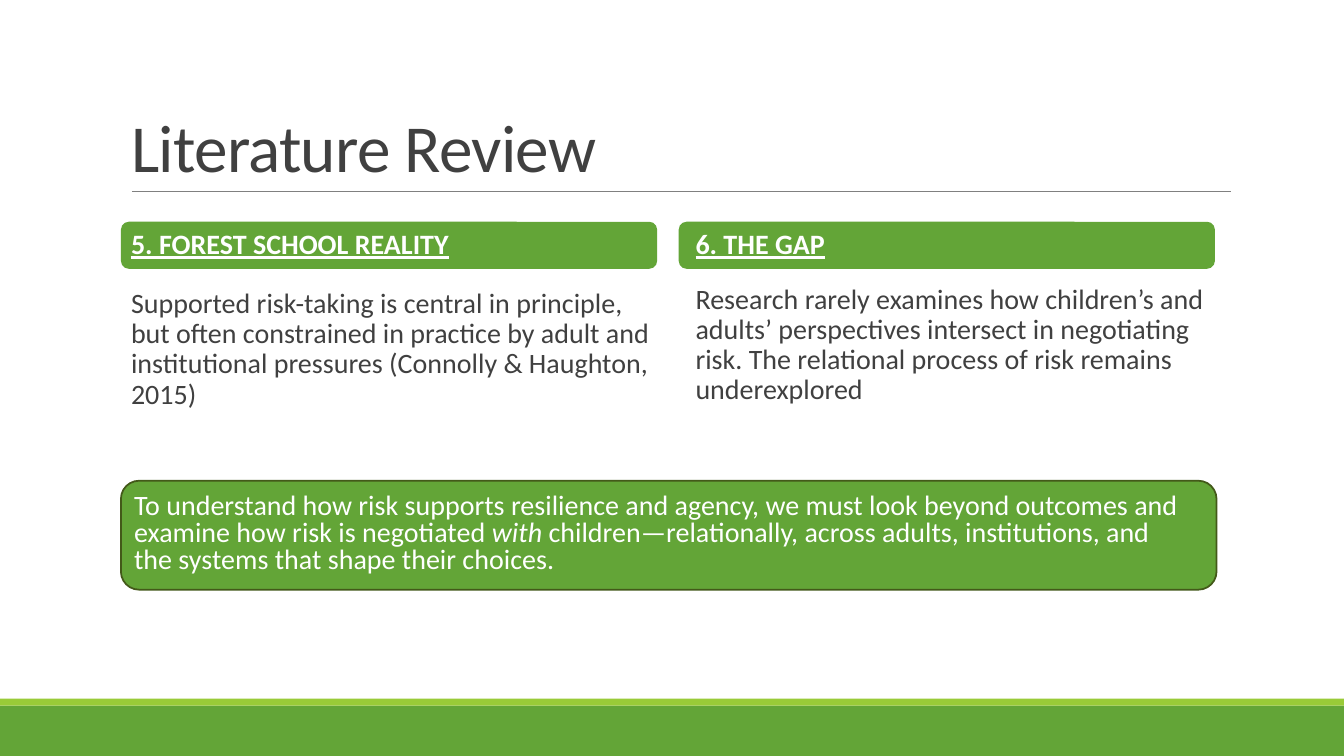
import lxml.etree
import pptx
import pptx.dml.color
import pptx.enum.shapes
import pptx.enum.text
import pptx.oxml.ns
import pptx.util
from dataclasses import dataclass

Pt = pptx.util.Pt
ANCHOR = pptx.enum.text.MSO_ANCHOR
SHAPE = pptx.enum.shapes.MSO_SHAPE

# Content
TITLE = "Literature Review"
COLUMNS = [
    {
        "heading": "5. FOREST SCHOOL REALITY",
        "body": "Supported risk-taking is central in principle, but often constrained "
                "in practice by adult and institutional pressures (Connolly & Haughton, 2015)",
        "body_top": 203,
    },
    {
        "heading": "6. THE GAP",
        "body": "Research rarely examines how children’s and adults’ perspectives intersect "
                "in negotiating risk. The relational process of risk remains underexplored",
        "body_top": 200,
    },
]
# Each conclusion line is a list of (text, italic) runs
CONCLUSION = [
    [
        ("To understand how risk supports resilience and agency, we must look beyond "
         "outcomes and examine how risk is negotiated ", False),
        ("with", True),
        (" children—relationally, across adults, institutions, and ", False),
    ],
    [("the systems that shape their choices.", False)],
]


@dataclass(frozen=True)
class Theme:
    font: str = "Calibri"
    green: str = "63A537"
    lime: str = "99CB38"
    dark_green: str = "435919"
    gray: str = "808080"
    ink: str = "404040"
    white: str = "FFFFFF"
    title_size: int = 48
    text_size: int = 20


THEME = Theme()

# Layout in points
WIDTH, HEIGHT = 960, 540
LEFT = 86.4
FOOTER_TOP, STRIPE_HEIGHT = 504, 5
BAR_TOP, BAR_WIDTH, BAR_HEIGHT, BAR_PITCH = 158.4, 383, 33.6, 398.4
TEXT_WIDTH, TEXT_PITCH = 388.8, 403.2
HEADING_TOP, HEADING_HEIGHT, BODY_HEIGHT = 146.2, 58.3, 111.6
CALLOUT_TOP, CALLOUT_WIDTH, CALLOUT_HEIGHT = 343.4, 782.6, 77.8


def color(value):
    return pptx.dml.color.RGBColor.from_string(value)


def add_block(slide, kind, left, top, width, height, fill, line=None):
    shape = slide.shapes.add_shape(kind, Pt(left), Pt(top), Pt(width), Pt(height))
    shape.shadow.inherit = False
    shape.fill.solid()
    shape.fill.fore_color.rgb = color(fill)
    if line:
        shape.line.color.rgb = color(line)
        shape.line.width = Pt(1.25)
    else:
        shape.line.fill.background()


def add_rule(slide, left, right, top):
    rule = slide.shapes.add_connector(
        pptx.enum.shapes.MSO_CONNECTOR.STRAIGHT, Pt(left), Pt(top), Pt(right), Pt(top))
    rule.line.color.rgb = color(THEME.gray)
    rule.line.width = Pt(0.5)
    lxml.etree.SubElement(rule.element.spPr, pptx.oxml.ns.qn("a:effectLst"))


def place(shape, left, top, width, height, anchor, side_margin=7.2):
    shape.left, shape.top, shape.width, shape.height = map(Pt, (left, top, width, height))
    frame = shape.text_frame
    frame.word_wrap = True
    frame.auto_size = pptx.enum.text.MSO_AUTO_SIZE.NONE
    frame.vertical_anchor = anchor
    frame.margin_left = frame.margin_right = Pt(side_margin)
    frame.margin_top = frame.margin_bottom = Pt(3.6)
    return frame.paragraphs[0]


def space(paragraph, line_spacing, after=2):
    paragraph.alignment = pptx.enum.text.PP_ALIGN.LEFT
    paragraph.line_spacing = line_spacing
    paragraph.space_before = Pt(0)
    paragraph.space_after = Pt(after)


def add_run(paragraph, text, ink, size=THEME.text_size, bold=False, italic=False,
            underline=False):
    run = paragraph.add_run()
    run.text = text
    font = run.font
    font.name, font.size = THEME.font, Pt(size)
    font.bold, font.italic, font.underline = bold, italic, underline
    font.color.rgb = color(ink)
    return run


def add_blank_bullet(paragraph):
    properties = paragraph._p.get_or_add_pPr()
    properties.set("marL", str(Pt(7.2)))
    properties.set("indent", str(Pt(-7.2)))
    bullet_color = lxml.etree.SubElement(properties, pptx.oxml.ns.qn("a:buClr"))
    lxml.etree.SubElement(bullet_color, pptx.oxml.ns.qn("a:srgbClr"), val=THEME.lime)
    lxml.etree.SubElement(properties, pptx.oxml.ns.qn("a:buChar"), char=" ")


def main():
    presentation = pptx.Presentation()
    presentation.slide_width, presentation.slide_height = Pt(WIDTH), Pt(HEIGHT)
    slide = presentation.slides.add_slide(presentation.slide_layouts.get_by_name("Comparison"))
    placeholders = list(slide.placeholders)

    # Footer bands and title rule
    add_block(slide, SHAPE.RECTANGLE, 0, FOOTER_TOP, WIDTH, HEIGHT - FOOTER_TOP, THEME.green)
    add_block(slide, SHAPE.RECTANGLE, 0, FOOTER_TOP - STRIPE_HEIGHT, WIDTH, STRIPE_HEIGHT,
              THEME.lime)
    add_rule(slide, 94.3, 879, 136.6)

    # Green panels
    add_block(slide, SHAPE.ROUNDED_RECTANGLE, LEFT, CALLOUT_TOP, CALLOUT_WIDTH, CALLOUT_HEIGHT,
              THEME.green, THEME.dark_green)
    for index in range(len(COLUMNS)):
        add_block(slide, SHAPE.ROUNDED_RECTANGLE, LEFT + index * BAR_PITCH, BAR_TOP,
                  BAR_WIDTH, BAR_HEIGHT, THEME.green)

    # Bring the placeholders in front of the panels
    for placeholder in placeholders:
        slide.shapes.element.append(placeholder.element)

    # Title
    paragraph = place(slide.shapes.title, LEFT, 22.3, 792, 114.5, ANCHOR.BOTTOM)
    space(paragraph, 0.85, after=0)
    run = add_run(paragraph, TITLE, THEME.ink, THEME.title_size)
    run.font._element.set("spc", "-50")

    # Columns: a heading and a body each
    for index, column in enumerate(COLUMNS):
        heading, body = placeholders[1 + 2 * index:3 + 2 * index]
        left = LEFT + index * TEXT_PITCH
        paragraph = place(heading, left, HEADING_TOP, TEXT_WIDTH, HEADING_HEIGHT, ANCHOR.MIDDLE)
        space(paragraph, 0.9)
        add_run(paragraph, column["heading"], THEME.white, bold=True, underline=True)

        paragraph = place(body, left, column["body_top"], TEXT_WIDTH, BODY_HEIGHT, ANCHOR.TOP, 0)
        add_blank_bullet(paragraph)
        space(paragraph, 0.9)
        add_run(paragraph, column["body"], THEME.ink)

    # Conclusion
    box = slide.shapes.add_textbox(0, 0, 0, 0)
    paragraph = place(box, 95.8, 349.2, CALLOUT_WIDTH, 66.2, ANCHOR.TOP, 0)
    space(paragraph, 0.8)
    for number, line in enumerate(CONCLUSION):
        if number:
            paragraph.add_line_break()
        for text, italic in line:
            add_run(paragraph, text, THEME.white, italic=italic)

    presentation.save("out.pptx")


if __name__ == "__main__":
    main()
